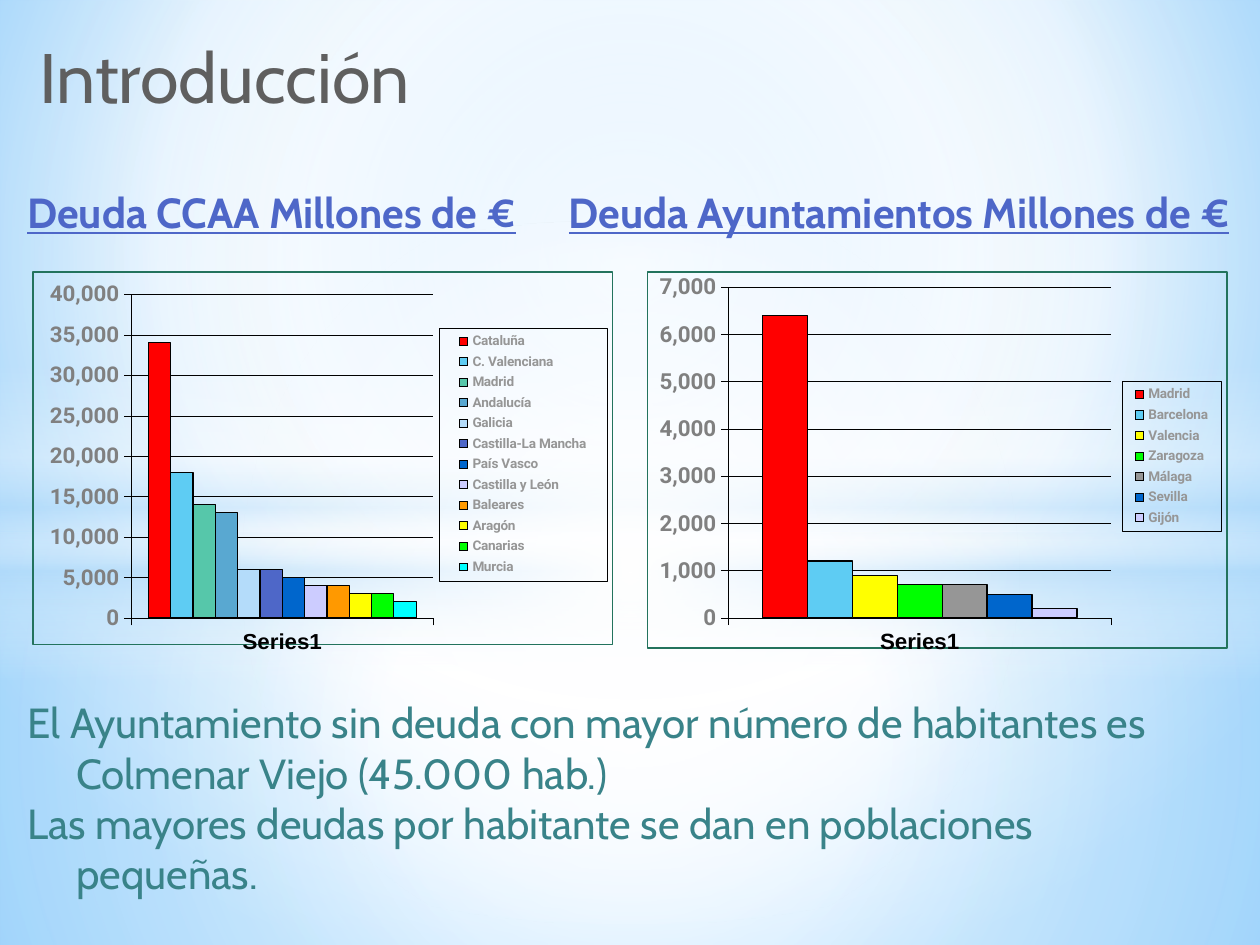
import pptx
import pptx.chart.data
import pptx.dml.color
import pptx.enum.chart
import pptx.enum.shapes
import pptx.enum.text
import pptx.oxml
import pptx.oxml.ns
import pptx.util

Pt = pptx.util.Pt
rgb = pptx.dml.color.RGBColor.from_string
NS = pptx.oxml.ns.nsdecls("a", "c")


def write(tf, *paragraphs, size=24, color="000000", bold=False, underline=False,
          margins=None, hanging=0, wrap=True):
    """Fill a text frame, one paragraph for each text."""
    tf.word_wrap = wrap
    tf.auto_size = pptx.enum.text.MSO_AUTO_SIZE.NONE
    tf.vertical_anchor = pptx.enum.text.MSO_ANCHOR.TOP
    if margins is not None:
        tf.margin_left = tf.margin_top = tf.margin_right = tf.margin_bottom = Pt(margins)
    for i, text in enumerate(paragraphs):
        p = tf.add_paragraph() if i else tf.paragraphs[0]
        p.alignment = pptx.enum.text.PP_ALIGN.LEFT
        p.space_before = Pt(0)
        if hanging:
            pPr = p._p.get_or_add_pPr()
            pPr.set("marL", str(Pt(hanging)))
            pPr.set("indent", str(-Pt(hanging)))
            pPr.append(pptx.oxml.parse_xml(f"<a:buNone {NS}/>"))
        r = p.add_run()
        r.text = text
        r.font.name, r.font.size = "Cabin", Pt(size)
        r.font.bold, r.font.underline = bold, underline
        r.font.color.rgb = rgb(color)


def gradient(fill, parent, stops, focus=None):
    """Give a fill its (position, colour, opacity) stops, round a focus or downwards."""
    fill.gradient()
    old = parent.find(pptx.oxml.ns.qn("a:gradFill"))
    gs = "".join(f'<a:gs pos="{pos * 1000}"><a:srgbClr val="{color}">'
                 f'<a:alpha val="{alpha * 1000}"/></a:srgbClr></a:gs>'
                 for pos, color, alpha in stops)
    if focus:
        sides = " ".join(f'{k}="{v * 1000}"' for k, v in zip("ltrb", focus))
        way = f'<a:path path="circle"><a:fillToRect {sides}/></a:path>'
    else:
        way = '<a:lin ang="5400000" scaled="0"/>'
    parent.replace(old, pptx.oxml.parse_xml(
        f'<a:gradFill {NS} rotWithShape="1"><a:gsLst>{gs}</a:gsLst>{way}</a:gradFill>'))


prs = pptx.Presentation()
prs.slide_width, prs.slide_height = Pt(720), Pt(540)
s = prs.slides.add_slide(prs.slide_layouts[1])

# Background
fill = s.background.fill
fill.solid()
gradient(fill, s.element.xpath(".//p:bgPr")[0],
         [(0, "9ED5FF", 100), (60, "FFFFFF", 100), (100, "5BB9FF", 100)],
         (20, 10, 20, 60))

# Soft light panels, kept behind the placeholders
shape_type = pptx.enum.shapes.MSO_SHAPE
centre = (50, 50, 50, 50)
panels = [
    (shape_type.RECTANGLE, 304.5, 235.5, centre,
     [(0, "FFFFFF", 91), (37, "FFFFFF", 76), (100, "B4DCFA", 79)]),
    (shape_type.RECTANGLE, 0, 304.5, centre,
     [(0, "FFFFFF", 89), (48, "FFFFFF", 62), (100, "B4DCFA", 79)]),
    (shape_type.RECTANGLE, 209, 180, None,
     [(0, "FFFFFF", 0), (29, "FFFFFF", 30), (45, "B4DCFA", 40),
      (55, "FFFFFF", 26), (65, "B4DCFA", 60), (100, "FFFFFF", 0)]),
    (shape_type.OVAL, 126, 402, centre, [(0, "FFFFFF", 100), (54, "FFFFFF", 0)]),
]
for i, (kind, top, height, focus, stops) in enumerate(panels):
    sp = s.shapes.add_shape(kind, 0, Pt(top), Pt(720), Pt(height))
    sp.shadow.inherit = False
    sp.line.fill.background()
    gradient(sp.fill, sp.element.spPr, stops, focus)
    s.shapes.element.insert(2 + i, sp.element)

# Title
title = s.shapes.title
title.left, title.top, title.width, title.height = Pt(19.5), Pt(16), Pt(673), Pt(62)
write(title.text_frame, "Introducción", size=40, color="5F5F5F", margins=3)

# Closing remarks
body = s.placeholders[1]
body.left, body.top, body.width, body.height = Pt(8.5), Pt(394.5), Pt(695), Pt(124)
write(body.text_frame,
      "El Ayuntamiento sin deuda con mayor número de habitantes es Colmenar Viejo (45.000 hab.)",
      "Las mayores deudas por habitante se dan en poblaciones pequeñas.",
      color="398389", hanging=28)

# Chart headings
for text, left, width in [("Deuda CCAA Millones de €", 8.5, 300),
                          ("Deuda Ayuntamientos Millones de €", 318, 402)]:
    tb = s.shapes.add_textbox(Pt(left), Pt(103), Pt(width), Pt(36))
    write(tb.text_frame, text, color="4E67C8", bold=True, underline=True, wrap=False)

# Debt charts: left, border width, axis top and step, plot box, legend box, series
regions = [
    ("Cataluña", 34000, "FF0000"), ("C. Valenciana", 18000, "5ECCF3"),
    ("Madrid", 14000, "56C7AA"), ("Andalucía", 13000, "59A8D1"),
    ("Galicia", 6000, "B4DCFA"), ("Castilla-La Mancha", 6000, "4E67C8"),
    ("País Vasco", 5000, "0066CC"), ("Castilla y León", 4000, "CCCCFF"),
    ("Baleares", 4000, "FF9900"), ("Aragón", 3000, "FFFF00"),
    ("Canarias", 3000, "00FF00"), ("Murcia", 2000, "00FFFF"),
]
cities = [
    ("Madrid", 6400, "FF0000"), ("Barcelona", 1200, "5ECCF3"),
    ("Valencia", 900, "FFFF00"), ("Zaragoza", 700, "00FF00"),
    ("Málaga", 700, "969696"), ("Sevilla", 500, "0066CC"), ("Gijón", 200, "CCCCFF"),
]
charts = [
    (18.5, 0.75, 40000, 5000, (0.17, 0.06, 0.52, 0.87), (0.7, 0.15, 0.29, 0.68), regions),
    (369.5, 1, 7000, 1000, (0.14, 0.04, 0.66, 0.88), (0.82, 0.29, 0.17, 0.4), cities),
]
xl = pptx.enum.chart
for left, border, top_value, step, plot_box, legend_box, debts in charts:
    data = pptx.chart.data.CategoryChartData()
    data.categories = ["Series1"]
    for name, value, _ in debts:
        data.add_series(name, [value])
    chart = s.shapes.add_chart(xl.XL_CHART_TYPE.COLUMN_CLUSTERED, Pt(left), Pt(155),
                               Pt(332), Pt(219), data).chart
    chart.has_title = False
    chart.has_legend = True
    chart.legend.position = xl.XL_LEGEND_POSITION.RIGHT
    chart.legend.include_in_layout = False

    # Columns
    plot = chart.plots[0]
    plot.gap_width, plot.overlap, plot.vary_by_categories = 150, 0, False
    for series, (_, _, color) in zip(plot.series, debts):
        series.format.fill.solid()
        series.format.fill.fore_color.rgb = rgb(color)
        series.format.line.color.rgb = rgb("000000")
        series.format.line.width = Pt(0.71)

    # Axes
    cat, val = chart.category_axis, chart.value_axis
    cat.tick_label_position = xl.XL_TICK_LABEL_POSITION.LOW
    val.minimum_scale, val.maximum_scale, val.major_unit = 0, top_value, step
    val.tick_labels.number_format = "#,##0"
    val.tick_labels.number_format_is_linked = False
    for axis in (cat, val):
        axis.major_tick_mark = xl.XL_TICK_MARK.OUTSIDE
    for line in (cat.format.line, val.format.line, val.major_gridlines.format.line):
        line.color.rgb = rgb("000000")
        line.width = Pt(0.18)

    # Fonts
    for font, name, size, color in [(chart.font, "Arial", 12.8, "000000"),
                                    (cat.tick_labels.font, "Arial", 12.8, "000000"),
                                    (val.tick_labels.font, "Roboto", 12.8, "808080"),
                                    (chart.legend.font, "Roboto", 7.8, "969696")]:
        font.name, font.size, font.bold = name, Pt(size), True
        font.color.rgb = rgb(color)

    # Plot and legend places, with the frames round chart and legend
    space = chart.element
    for tag, box in [("plotArea", plot_box), ("legend", legend_box)]:
        part = space.find(f".//c:{tag}", space.nsmap)
        for old in part.findall("c:layout", space.nsmap):
            part.remove(old)
        inner = '<c:layoutTarget val="inner"/>' if tag == "plotArea" else ""
        sizes = "".join(f'<c:{k} val="{v}"/>' for k, v in zip("xywh", box))
        layout = pptx.oxml.parse_xml(
            f'<c:layout {NS}><c:manualLayout>{inner}<c:xMode val="edge"/>'
            f'<c:yMode val="edge"/>{sizes}</c:manualLayout></c:layout>')
        part.insert(0 if tag == "plotArea" else 1, layout)
    for path, color, width in [("c:chart", "23735D", border),
                               (".//c:legend/c:overlay", "000000", 0.18)]:
        space.find(path, space.nsmap).addnext(pptx.oxml.parse_xml(
            f'<c:spPr {NS}><a:noFill/><a:ln w="{Pt(width)}"><a:solidFill>'
            f'<a:srgbClr val="{color}"/></a:solidFill></a:ln></c:spPr>'))

prs.save("out.pptx")
